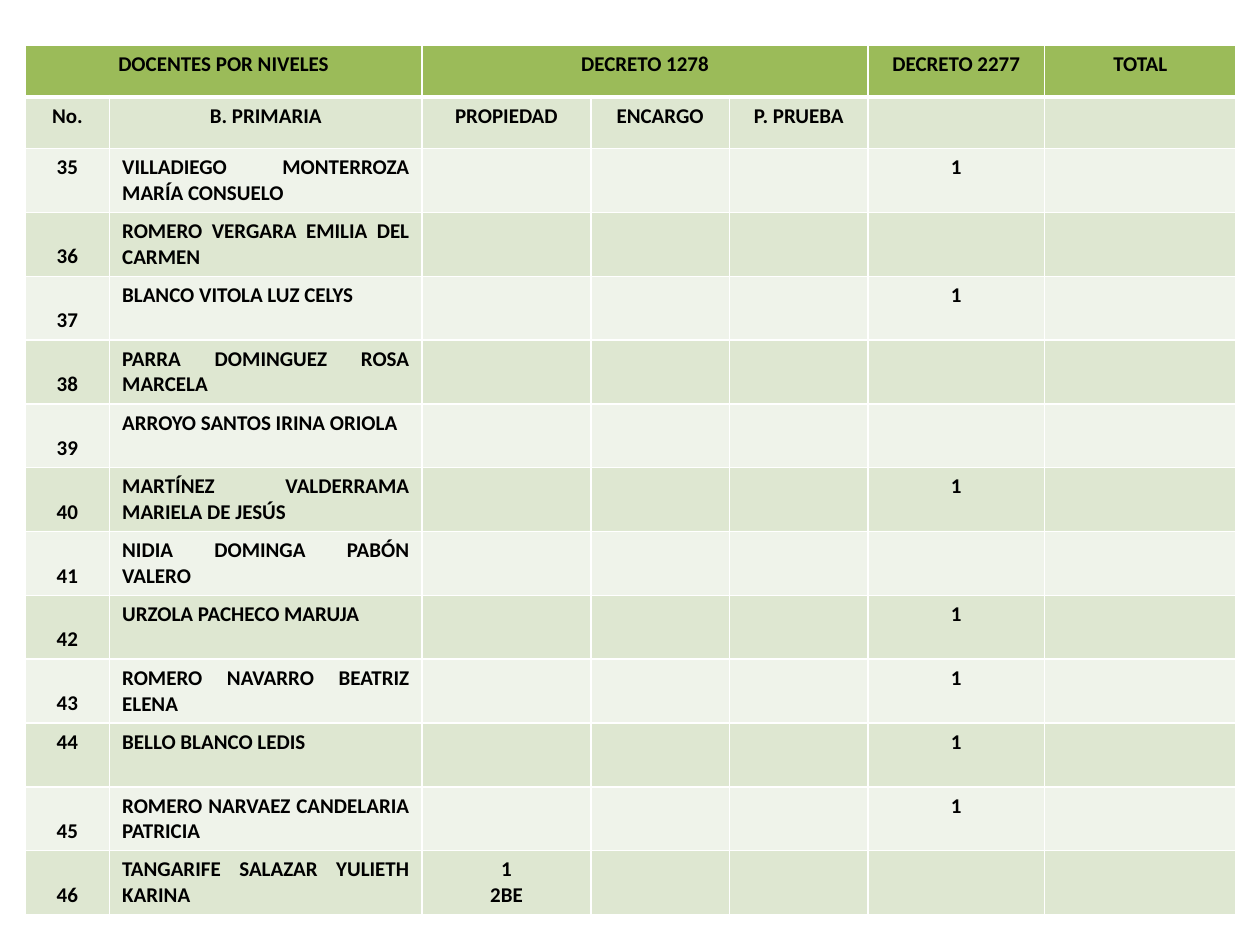
from lxml import etree
from pptx import Presentation
from pptx import util as u
from pptx.dml.color import RGBColor
from pptx.enum import text
from pptx.oxml import ns

HUES = {"head": "9BBB59", "dark": "DEE7D1", "pale": "EFF3EA", "line": "FFFFFF", "ink": "000000"}
ALIGN = text.PP_ALIGN
COLS = [0.67, 2.48, 1.34, 1.1, 1.1, 1.4, 1.52]
SHORT, FULL, FIRST = 0.41, 6.9, 35
STAFF = [
    ("VILLADIEGO MONTERROZA MARÍA CONSUELO", "", "1"),
    ("ROMERO VERGARA EMILIA DEL CARMEN", "", ""),
    ("BLANCO VITOLA LUZ CELYS", "", "1"),
    ("PARRA DOMINGUEZ ROSA MARCELA", "", ""),
    ("ARROYO SANTOS IRINA ORIOLA", "", ""),
    ("MARTÍNEZ VALDERRAMA MARIELA DE JESÚS", "", "1"),
    ("NIDIA DOMINGA PABÓN VALERO", "", ""),
    ("URZOLA PACHECO MARUJA", "", "1"),
    ("ROMERO NAVARRO BEATRIZ ELENA", "", "1"),
    ("BELLO BLANCO LEDIS", "", "1"),
    ("ROMERO NARVAEZ CANDELARIA PATRICIA", "", "1"),
    ("TANGARIFE SALAZAR YULIETH KARINA", "1\n2BE", ""),
]
HIGH = {35, 44}

rows = [
    ["DOCENTES POR NIVELES", "", "DECRETO 1278", "", "", "DECRETO 2277", "TOTAL"],
    ["No.", "B. PRIMARIA", "PROPIEDAD", "ENCARGO", "P. PRUEBA", "", ""],
]
for num, (name, own, old) in enumerate(STAFF, FIRST):
    rows.append([str(num), name, own, "", "", old, ""])


def edge(cell, side, width):
    line = etree.SubElement(cell._tc.get_or_add_tcPr(), ns.qn("a:ln" + side), w=str(u.Pt(width)))
    fill = etree.SubElement(line, ns.qn("a:solidFill"))
    etree.SubElement(fill, ns.qn("a:srgbClr"), val=HUES["line"])


def write(cell, words, align):
    for i, part in enumerate(words.split("\n")):
        para = cell.text_frame.paragraphs[0] if i == 0 else cell.text_frame.add_paragraph()
        para.alignment = align
        run = para.add_run()
        run.text = part
        run.font.name, run.font.size, run.font.bold = "Calibri", u.Pt(12), True
        run.font.color.rgb = RGBColor.from_string(HUES["ink"])


deck = Presentation()
deck.slide_width, deck.slide_height = u.Inches(10), u.Inches(7.5)
slide = deck.slides.add_slide(deck.slide_layouts[6])
frame = slide.shapes.add_table(
    len(rows), len(COLS), u.Inches(0.2), u.Inches(0.36), u.Inches(sum(COLS)), u.Inches(FULL))
table = frame.table
for col, width in zip(table.columns, COLS):
    col.width = u.Inches(width)
tall = (FULL - 2 * SHORT) / len(STAFF)

for r, row in enumerate(rows):
    table.rows[r].height = u.Inches(SHORT if r < 2 else tall)
    hue = "head" if r == 0 else "dark" if r % 2 else "pale"
    for c, words in enumerate(row):
        cell = table.cell(r, c)
        for side in "LRTB":
            edge(cell, side, 3 if r == 0 and side == "B" else 1)
        cell.fill.solid()
        cell.fill.fore_color.rgb = RGBColor.from_string(HUES[hue])
        if words:
            write(cell, words, ALIGN.JUSTIFY if c == 1 and r > 1 else ALIGN.CENTER)
        if c == 0 and r > 1 and int(words) not in HIGH:
            cell.margin_top = u.Inches(0.25)

for start, end in [(0, 1), (2, 4)]:
    table.cell(0, start).merge(table.cell(0, end))

deck.save("out.pptx")
